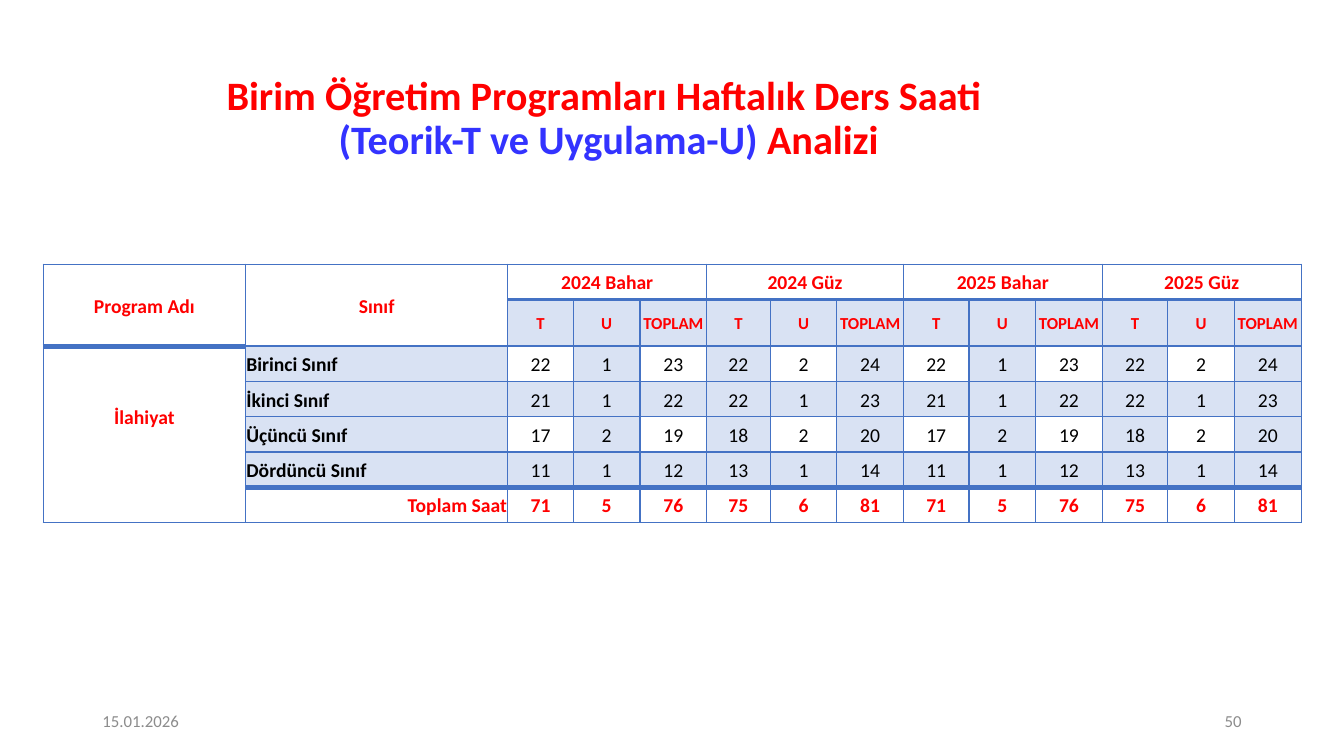
from copy import deepcopy
from dataclasses import dataclass

from lxml.etree import SubElement
from pptx import Presentation
from pptx.dml.color import RGBColor
from pptx.enum.text import MSO_ANCHOR, MSO_AUTO_SIZE, PP_ALIGN
from pptx.oxml.ns import qn
from pptx.util import Cm, Pt


@dataclass(frozen=True)
class Theme:
    font: str = "Calibri"
    red: str = "FF0000"
    blue: str = "3333FF"
    black: str = "000000"
    grey: str = "8C8C8C"
    accent: str = "4472C4"
    tint_percent: int = 20
    title_size: float = 28.8
    table_size: float = 14
    small_size: float = 12
    thin: int = 1
    medium: int = 2
    thick: int = 4


THEME = Theme()
NO_GRID_STYLE = "{2D5ABB26-0587-4C30-8999-92F81FD0307C}"
SEMESTERS = ["2024 Bahar", "2024 Güz", "2025 Bahar", "2025 Güz"]
MEASURES = ["T", "U", "TOPLAM"]
YEAR_COUNT = 2
# Theory and practice hours in the spring and autumn semesters of each year
CLASS_HOURS = {
    "Birinci Sınıf": [(22, 1), (22, 2)],
    "İkinci Sınıf": [(21, 1), (22, 1)],
    "Üçüncü Sınıf": [(17, 2), (18, 2)],
    "Dördüncü Sınıf": [(11, 1), (13, 1)],
}
FIRST_CLASS_ROW = 2
TOTAL_ROW = FIRST_CLASS_ROW + len(CLASS_HOURS)
FIRST_HOUR_COLUMN = 2
THEORY_WIDTHS = [1.65, 1.6, 1.65, 1.65]
COLUMN_WIDTHS = [5.1, 6.61] + [
    width for theory in THEORY_WIDTHS for width in (theory, 1.68, 1.68)
]
ROW_HEIGHTS = [0.89, 1.17] + [0.89] * (len(CLASS_HOURS) + 1)


def add_run(paragraph, text, size, color, bold=False):
    run = paragraph.add_run()
    run.text = text
    run.font.name = THEME.font
    run.font.size = Pt(size)
    run.font.bold = bold
    run.font.color.rgb = RGBColor.from_string(color)
    return run


def add_title(slide):
    title = slide.shapes.title
    title.left, title.top, title.width, title.height = Cm(0.86), Cm(2.08), Cm(28.96), Cm(1.85)
    frame = title.text_frame
    frame.auto_size = MSO_AUTO_SIZE.NONE
    frame.word_wrap = True
    frame.vertical_anchor = MSO_ANCHOR.MIDDLE
    paragraph = frame.paragraphs[0]
    paragraph.alignment = PP_ALIGN.CENTER
    paragraph.line_spacing = 0.9
    first_run = add_run(paragraph, "Birim Öğretim Programları Haftalık Ders Saati ",
                        THEME.title_size, THEME.red, True)
    paragraph.add_line_break()
    line_break = paragraph._p.findall(qn("a:br"))[-1]
    line_break.append(deepcopy(first_run._r.rPr))
    add_run(paragraph, "(Teorik-T ve Uygulama-U) ", THEME.title_size, THEME.blue, True)
    add_run(paragraph, "Analizi", THEME.title_size, THEME.red, True)


def add_footer(slide, left, text, alignment):
    box = slide.shapes.add_textbox(left, Cm(17.65), Cm(7.62), Cm(1.02))
    box.text_frame.word_wrap = True
    box.text_frame.vertical_anchor = MSO_ANCHOR.MIDDLE
    paragraph = box.text_frame.paragraphs[0]
    paragraph.alignment = alignment
    add_run(paragraph, text, THEME.small_size, THEME.grey)


def write_cell(cell, text, size=THEME.table_size, color=THEME.red, bold=True,
               alignment=PP_ALIGN.CENTER):
    cell.vertical_anchor = MSO_ANCHOR.MIDDLE
    cell.margin_left = cell.margin_right = cell.margin_top = Cm(0.02)
    cell.margin_bottom = 0
    paragraph = cell.text_frame.paragraphs[0]
    paragraph.alignment = alignment
    paragraph.line_spacing = 1.07
    paragraph.space_after = Pt(8)
    add_run(paragraph, text, size, color, bold)


def rule_weight(boundary, column):
    """Give the weight of the horizontal rule above row number boundary."""
    if boundary == TOTAL_ROW or (boundary == FIRST_CLASS_ROW and column == 0):
        return THEME.thick
    if boundary == 1 or (boundary == FIRST_CLASS_ROW and column == 1):
        return THEME.medium
    return THEME.thin


def set_borders(cell, top, bottom):
    properties = cell._tc.get_or_add_tcPr()
    weights = {"a:lnL": THEME.thin, "a:lnR": THEME.thin, "a:lnT": top, "a:lnB": bottom}
    for tag, weight in weights.items():
        line = SubElement(properties, qn(tag), w=str(Pt(weight)))
        SubElement(SubElement(line, qn("a:solidFill")), qn("a:srgbClr"), val=THEME.accent)


def set_fill(cell, shaded):
    if not shaded:
        cell.fill.background()
        return
    cell.fill.solid()
    cell.fill.fore_color.rgb = RGBColor.from_string(THEME.accent)
    color = cell._tc.tcPr.find(qn("a:solidFill")).find(qn("a:srgbClr"))
    SubElement(color, qn("a:alpha"), val=str(THEME.tint_percent * 1000))


def is_shaded(row, column):
    """Tint measure headings and class names, and alternate the hours in odd class rows."""
    if row == 1:
        return column >= FIRST_HOUR_COLUMN
    if not FIRST_CLASS_ROW <= row < TOTAL_ROW or column == 0:
        return False
    return column == 1 or row % 2 == 1 or column % 2 == 1


def style_cells(table):
    for row in range(len(ROW_HEIGHTS)):
        for column in range(len(COLUMN_WIDTHS)):
            cell = table.cell(row, column)
            if not cell.is_spanned:
                height = cell.span_height if cell.is_merge_origin else 1
                set_borders(cell, rule_weight(row, column), rule_weight(row + height, column))
            set_fill(cell, is_shaded(row, column))


def write_headings(table):
    for column, text in enumerate(["Program Adı", "Sınıf"]):
        table.cell(0, column).merge(table.cell(1, column))
        write_cell(table.cell(0, column), text)
    for index, semester in enumerate(SEMESTERS):
        start = FIRST_HOUR_COLUMN + index * len(MEASURES)
        table.cell(0, start).merge(table.cell(0, start + len(MEASURES) - 1))
        write_cell(table.cell(0, start), semester)
        for offset, measure in enumerate(MEASURES):
            write_cell(table.cell(1, start + offset), measure, THEME.small_size)


def write_hours(table):
    program = table.cell(FIRST_CLASS_ROW, 0)
    program.merge(table.cell(TOTAL_ROW, 0))
    write_cell(program, "İlahiyat")
    program.margin_bottom = Cm(0.9)

    all_hours = []
    for row, (name, semesters) in enumerate(CLASS_HOURS.items(), FIRST_CLASS_ROW):
        write_cell(table.cell(row, 1), name, color=THEME.black, alignment=PP_ALIGN.LEFT)
        hours = [value for theory, practice in semesters * YEAR_COUNT
                 for value in (theory, practice, theory + practice)]
        all_hours.append(hours)
        for column, value in enumerate(hours, FIRST_HOUR_COLUMN):
            write_cell(table.cell(row, column), str(value), color=THEME.black, bold=False)

    write_cell(table.cell(TOTAL_ROW, 1), "Toplam Saat", alignment=PP_ALIGN.RIGHT)
    for column, values in enumerate(zip(*all_hours), FIRST_HOUR_COLUMN):
        write_cell(table.cell(TOTAL_ROW, column), str(sum(values)))


def add_hours_table(slide):
    table = slide.shapes.add_table(
        len(ROW_HEIGHTS), len(COLUMN_WIDTHS), Cm(1.09), Cm(6.66),
        Cm(sum(COLUMN_WIDTHS)), Cm(sum(ROW_HEIGHTS))).table
    table.first_row = table.horz_banding = False
    table._tbl.tblPr.find(qn("a:tableStyleId")).text = NO_GRID_STYLE
    for column, width in zip(table.columns, COLUMN_WIDTHS):
        column.width = Cm(width)
    for row, height in zip(table.rows, ROW_HEIGHTS):
        row.height = Cm(height)
    write_headings(table)
    write_hours(table)
    style_cells(table)


def main():
    presentation = Presentation()
    presentation.slide_width, presentation.slide_height = Cm(33.87), Cm(19.05)
    slide = presentation.slides.add_slide(presentation.slide_layouts.get_by_name("Title Only"))
    add_title(slide)
    add_footer(slide, Cm(2.33), "15.01.2026", PP_ALIGN.LEFT)
    add_footer(slide, Cm(23.92), "50", PP_ALIGN.RIGHT)
    add_hours_table(slide)
    presentation.save("out.pptx")


if __name__ == "__main__":
    main()
